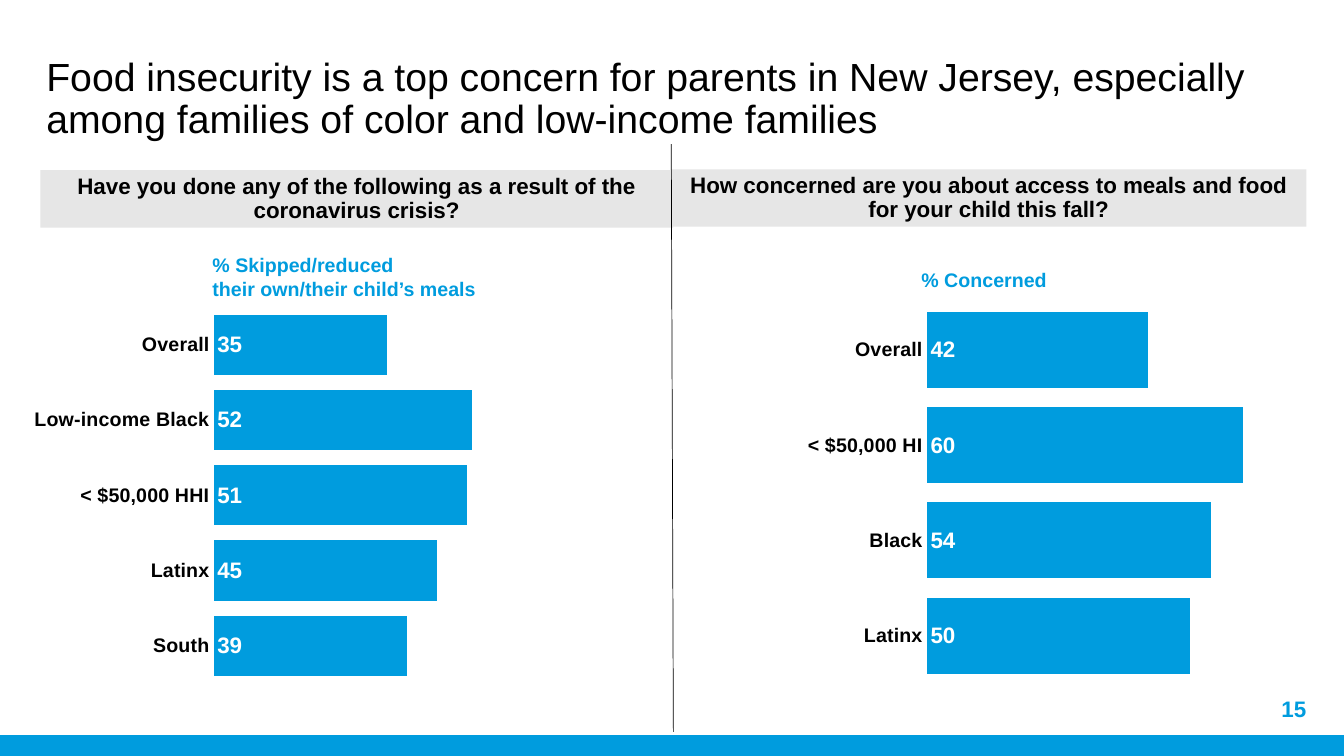
import pptx
import pptx.util
import pptx.dml.color
import pptx.chart.data
import pptx.enum.chart
import pptx.enum.shapes
import pptx.enum.text
import pptx.oxml

Pt = pptx.util.Pt
Align = pptx.enum.text.PP_ALIGN
Anchor = pptx.enum.text.MSO_ANCHOR
Fit = pptx.enum.text.MSO_AUTO_SIZE

# Content
BLUE, GREY, BLACK, WHITE = "009CDE", "E6E6E6", "000000", "FFFFFF"
FONT = "Arial"
TITLE = ("Food insecurity is a top concern for parents in New Jersey, "
         "especially among families of color and low-income families")
HEADS = [
    ("Have you done any of the following as a result of the coronavirus crisis?",
     (28.8, 121.6, 452, 41)),
    ("How concerned are you about access to meals and food for your child this fall?",
     (479.5, 121, 453.6, 41)),
]
SKIPPED = ["% Skipped/reduced", "their own/their child’s meals"]
WORRIED = "% Concerned"
PAGE = "15"
# Each chart: bars, axis maximum, frame, plot area as fractions of the frame
CHARTS = [
    ({"Overall": 35, "Low-income Black": 52, "< $50,000 HHI": 51,
      "Latinx": 45, "South": 39},
     80, (7.9, 200.9, 429.1, 288.7), (0.337, 0.064, 0.662, 0.931)),
    ({"Overall": 42, "< $50,000 HI": 60, "Black": 54, "Latinx": 50},
     60, (437, 197.3, 450.7, 292.3), (0.499, 0.064, 0.501, 0.931)),
]


def rgb(code):
    return pptx.dml.color.RGBColor.from_string(code)


def pts(box):
    return [Pt(n) for n in box]


def style(font, size, code, bold=True):
    font.name, font.size, font.bold = FONT, Pt(size), bold
    font.color.rgb = rgb(code)


def write(frame, lines, size, code, bold=True, align=Align.LEFT):
    frame.word_wrap = True
    for i, line in enumerate(lines):
        para = frame.add_paragraph() if i else frame.paragraphs[0]
        para.text, para.alignment = line, align
        style(para.font, size, code, bold)


def block(shapes, box, code):
    shape = shapes.add_shape(pptx.enum.shapes.MSO_SHAPE.RECTANGLE, *pts(box))
    shape.shadow.inherit = False
    shape.fill.solid()
    shape.fill.fore_color.rgb = rgb(code)
    shape.line.fill.background()
    return shape


def place(chart, area):
    """Fix the inner plot area by hand."""
    tags = "".join(f'<c:{k} val="{v}"/>' for k, v in zip("xywh", area))
    layout = pptx.oxml.parse_xml(
        '<c:layout xmlns:c="http://schemas.openxmlformats.org/drawingml/2006/chart">'
        '<c:manualLayout><c:layoutTarget val="inner"/>'
        f'<c:xMode val="edge"/><c:yMode val="edge"/>{tags}'
        '</c:manualLayout></c:layout>')
    plot = chart._chartSpace.chart.plotArea
    for old in plot.findall(layout.tag):
        plot.remove(old)
    plot.insert(0, layout)


def bars(shapes, vals, top, box, area):
    data = pptx.chart.data.CategoryChartData()
    data.categories = list(vals)
    data.add_series("Series 1", list(vals.values()))
    kind = pptx.enum.chart.XL_CHART_TYPE.BAR_CLUSTERED
    chart = shapes.add_chart(kind, *pts(box), data).chart
    chart.has_title = chart.has_legend = False
    style(chart.font, 16, BLACK)
    place(chart, area)

    # Axes
    cat, val = chart.category_axis, chart.value_axis
    cat.reverse_order = True
    cat.major_tick_mark = pptx.enum.chart.XL_TICK_MARK.NONE
    cat.format.line.fill.background()
    style(cat.tick_labels.font, 14, BLACK)
    val.minimum_scale, val.maximum_scale = 0, top
    val.has_major_gridlines = val.visible = False

    # Bars and value labels
    plot = chart.plots[0]
    plot.gap_width, plot.vary_by_categories = 25, False
    fill = plot.series[0].format.fill
    fill.solid()
    fill.fore_color.rgb = rgb(BLUE)
    plot.has_data_labels = True
    labels = plot.data_labels
    labels.show_value = True
    labels.position = pptx.enum.chart.XL_LABEL_POSITION.INSIDE_BASE
    style(labels.font, 16, WHITE)


def main():
    deck = pptx.Presentation()
    deck.slide_width, deck.slide_height = Pt(960), Pt(540)
    slide = deck.slides.add_slide(deck.slide_layouts[5])
    shapes = slide.shapes

    # Title
    title = shapes.title
    title.left, title.top, title.width, title.height = pts((25.9, 37.4, 913, 98.6))
    frame = title.text_frame
    write(frame, [TITLE], 28, BLACK, False)
    frame.auto_size, frame.vertical_anchor = Fit.NONE, Anchor.TOP
    frame.paragraphs[0].line_spacing = 0.9

    # Footer band and page number
    block(shapes, (0, 525, 960, 15), BLUE)
    frame = shapes.add_textbox(*pts((717, 491.8, 216, 28.8))).text_frame
    frame.margin_left = frame.margin_right = frame.margin_top = frame.margin_bottom = 0
    frame.vertical_anchor = Anchor.MIDDLE
    write(frame, [PAGE], 16, BLUE, align=Align.RIGHT)

    # Question headings
    for text, box in HEADS:
        frame = block(shapes, box, GREY).text_frame
        frame.vertical_anchor = Anchor.MIDDLE
        write(frame, [text], 16, BLACK, align=Align.CENTER)
        para = frame.paragraphs[0]
        para.line_spacing, para.space_before = 0.9, Pt(10)

    # Charts
    for chart in CHARTS:
        bars(shapes, *chart)

    # Chart captions
    frame = shapes.add_textbox(*pts((144.7, 177.1, 278.6, 41))).text_frame
    write(frame, SKIPPED, 14, BLUE)
    table = shapes.add_table(1, 1, *pts((650.9, 182.9, 201.6, 28.8))).table
    table.first_row = table.horz_banding = False
    cell = table.cell(0, 0)
    cell.fill.background()
    cell.vertical_anchor = Anchor.BOTTOM
    write(cell.text_frame, [WORRIED], 14, BLUE)

    # Divider
    line = shapes.add_connector(pptx.enum.shapes.MSO_CONNECTOR.STRAIGHT,
                                *pts((479.5, 103, 481, 522.7)))
    line.line.width, line.line.color.rgb = Pt(0.5), rgb(BLACK)
    line._element.spPr.append(pptx.oxml.parse_xml(
        '<a:effectLst xmlns:a="http://schemas.openxmlformats.org/drawingml/2006/main"/>'))

    deck.save("out.pptx")


if __name__ == "__main__":
    main()
